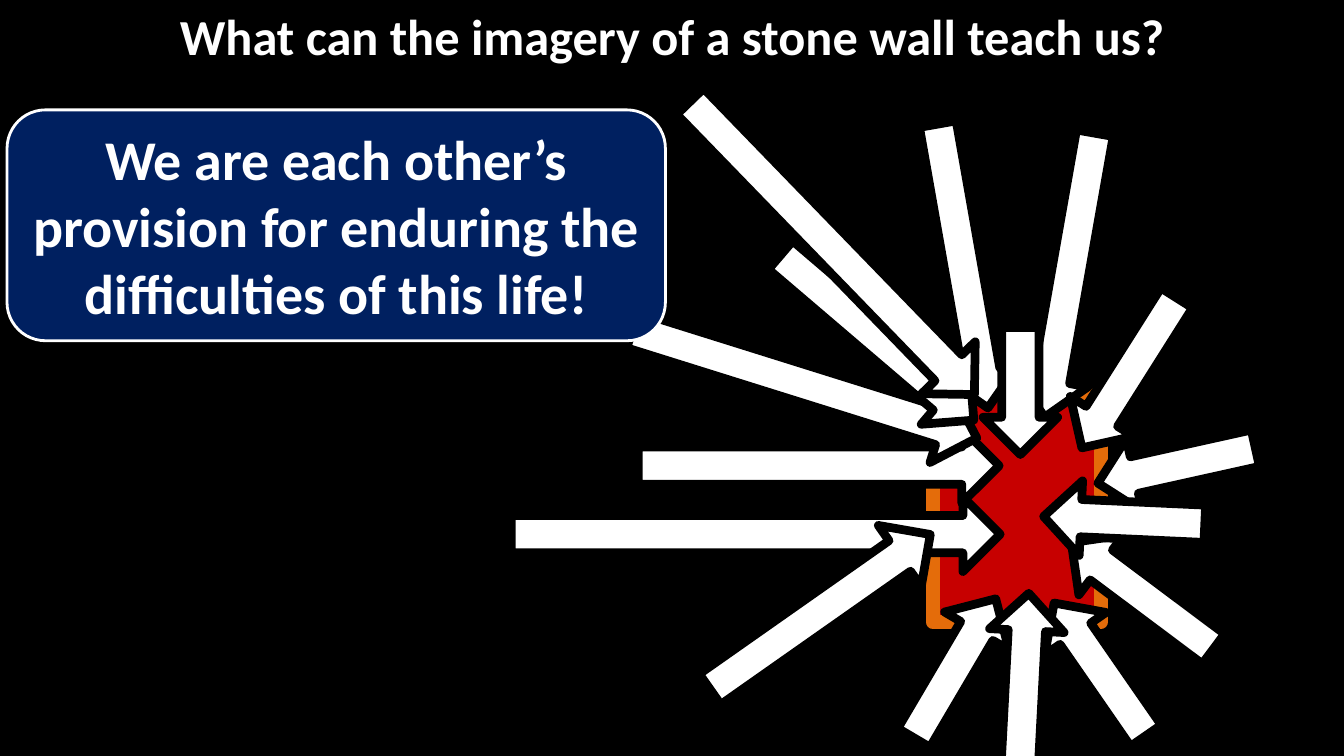
import pptx
import pptx.dml.color
import pptx.enum.shapes
import pptx.enum.text
import pptx.oxml
import pptx.oxml.ns
import pptx.util

Inches = pptx.util.Inches
Pt = pptx.util.Pt
RGBColor = pptx.dml.color.RGBColor
Preset = pptx.enum.shapes.MSO_SHAPE
Anchor = pptx.enum.text.MSO_ANCHOR

BLACK = RGBColor(0x00, 0x00, 0x00)
WHITE = RGBColor(0xFF, 0xFF, 0xFF)
RED = RGBColor(0xFF, 0x00, 0x00)
ORANGE = RGBColor(0xE4, 0x6C, 0x0A)
NAVY = RGBColor(0x00, 0x20, 0x60)

ARROW_HEIGHT = 0.74
STONE = (4.25, 2.92, 1.67, 2.25)
ARROWS = [
    (0.07, 3.93, 4.85, 0),
    (1.8, 4.7, 2.67, 324.9),
    (3.67, 5.26, 1.6, 300.5),
    (5.11, 5.27, 1.6, 235.3),
    (5.87, 3.25, 1.6, 167.5),
    (1.33, 3.25, 3.58, 0),
    (1.19, 2.44, 3.58, 17.4),
    (2.44, 1.98, 2.52, 40.5),
    (3.12, 1.27, 2.86, 80),
    (4.18, 1.36, 2.86, 100),
    (4.49, 2.51, 1.26, 90),
    (5.32, 2.33, 1.76, 122.3),
    (5.45, 4.54, 1.76, 216.8),
    (1.23, 1.09, 4.05, 45.9),
    (4.22, 5.45, 1.87, 273),
    (5.35, 3.79, 1.6, 182.6),
]


def write_text(shape, text, size, anchor):
    """Write one centred bold white paragraph into a shape and return it."""
    frame = shape.text_frame
    frame.text = text
    frame.word_wrap = True
    frame.auto_size = pptx.enum.text.MSO_AUTO_SIZE.NONE
    frame.vertical_anchor = anchor
    para = frame.paragraphs[0]
    para.alignment = pptx.enum.text.PP_ALIGN.CENTER
    for span in para.runs:
        span.font.name = "Calibri"
        span.font.size = Pt(size)
        span.font.bold = True
        span.font.color.rgb = WHITE
    return para


def add_block(page, preset, box, fill, line, line_width):
    """Add a filled and outlined preset shape without a shadow."""
    shape = page.shapes.add_shape(preset, *map(Inches, box))
    shape.shadow.inherit = False
    shape.fill.solid()
    shape.fill.fore_color.rgb = fill
    shape.line.color.rgb = line
    shape.line.width = Pt(line_width)
    return shape


def place_title(page, box):
    """Format the title placeholder inside the box."""
    title = page.shapes.title
    title.left, title.top, title.width, title.height = map(Inches, box)
    title.fill.solid()
    title.fill.fore_color.rgb = BLACK
    para = write_text(title, "What can the imagery of a stone wall teach us?", 36, Anchor.TOP)
    para.space_before = Pt(9)


def draw_stone_under_pressure(page, box):
    """Draw the stone and the arrows pressing on it, offset from the box corner."""
    left, top, _, _ = box
    x, y, width, height = STONE
    stone = add_block(page, Preset.RECTANGLE, (left + x, top + y, width, height), RED, ORANGE, 10)
    color = stone.fill._xPr.find(".//" + pptx.oxml.ns.qn("a:srgbClr"))
    alpha = pptx.oxml.parse_xml("<a:alpha %s val='78000'/>" % pptx.oxml.ns.nsdecls("a"))
    color.append(alpha)
    for x, y, length, angle in ARROWS:
        arrow_box = (left + x, top + y, length, ARROW_HEIGHT)
        arrow = add_block(page, Preset.RIGHT_ARROW, arrow_box, WHITE, BLACK, 6.25)
        arrow.rotation = angle


def place_message(page, box):
    """Fill the box with the rounded message panel."""
    panel = add_block(page, Preset.ROUNDED_RECTANGLE, box, NAVY, WHITE, 2)
    message = "We are each other’s provision for enduring the difficulties of this life!"
    write_text(panel, message, 40, Anchor.MIDDLE)


def main():
    """Build the deck and save it."""
    deck = pptx.Presentation()
    deck.slide_width = Inches(13.33)
    deck.slide_height = Inches(7.5)
    page = deck.slides.add_slide(deck.slide_layouts[5])
    page.background.fill.solid()
    page.background.fill.fore_color.rgb = BLACK
    place_title(page, (1.67, 0, 10, 0.83))
    draw_stone_under_pressure(page, (5, 1, 8.33, 6.5))
    place_message(page, (0.07, 1.09, 6.53, 2.29))
    deck.save("out.pptx")


if __name__ == "__main__":
    main()
